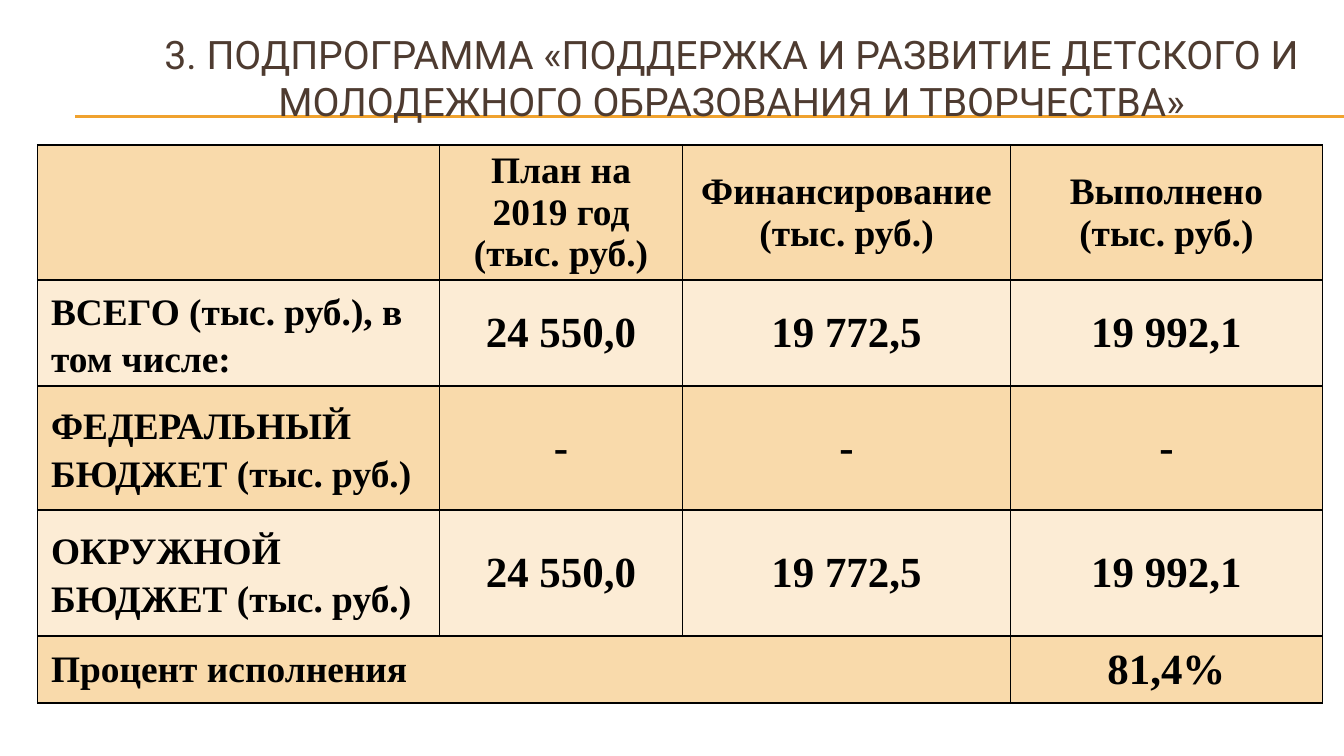
from pptx import Presentation
from pptx.dml.color import RGBColor
from pptx.enum.shapes import MSO_CONNECTOR
from pptx.enum.text import MSO_ANCHOR, MSO_AUTO_SIZE, PP_ALIGN
from pptx.oxml.ns import qn
from pptx.util import Inches, Pt
from lxml import etree

CENTER, LEFT = PP_ALIGN.CENTER, PP_ALIGN.LEFT
MIDDLE = MSO_ANCHOR.MIDDLE
NO_AUTOFIT = MSO_AUTO_SIZE.NONE
STRAIGHT = MSO_CONNECTOR.STRAIGHT
TITLE_ONLY = 5

COLORS = {
    "title": "4E3B30",
    "rule": "F0A22E",
    "text": "000000",
    "border": "000000",
    "dark band": "F9DAAB",
    "light band": "FCECD5",
}
TITLE_FONT, TABLE_FONT = "Roboto", "Times New Roman"
LABEL_SIZE, VALUE_SIZE = 20, 23

TITLE = ("3. ПОДПРОГРАММА «ПОДДЕРЖКА И РАЗВИТИЕ ДЕТСКОГО И "
         "МОЛОДЕЖНОГО ОБРАЗОВАНИЯ И ТВОРЧЕСТВА»")
COLUMN_WIDTHS = [2.99, 1.81, 2.44, 2.32]
ROW_HEIGHTS = [1.0, 0.78, 0.92, 0.94, 0.5]
AMOUNTS = ["24 550,0", "19 772,5", "19 992,1"]
ROWS = [
    ["", "План на 2019 год (тыс. руб.)", "Финансирование\n(тыс. руб.)",
     "Выполнено\n(тыс. руб.)"],
    ["ВСЕГО (тыс. руб.), в том числе:", *AMOUNTS],
    ["ФЕДЕРАЛЬНЫЙ БЮДЖЕТ (тыс. руб.)", "-", "-", "-"],
    ["ОКРУЖНОЙ БЮДЖЕТ (тыс. руб.)", *AMOUNTS],
    ["Процент исполнения", "", "", "81,4%"],
]


def color(name):
    return RGBColor.from_string(COLORS[name])


class SlideBuilder:
    """Holds the current slide and draws each kind of element in its style."""

    def __init__(self, slide):
        self.slide = slide

    def style_font(self, font, name, size, color_name, bold=False):
        font.name, font.size, font.bold = name, Pt(size), bold
        font.color.rgb = color(color_name)

    def title(self, text, left, top, width, height):
        shape = self.slide.shapes.title
        shape.left, shape.top = Inches(left), Inches(top)
        shape.width, shape.height = Inches(width), Inches(height)
        frame = shape.text_frame
        frame.text = text
        frame.word_wrap = True
        frame.auto_size = NO_AUTOFIT
        frame.vertical_anchor = MIDDLE
        paragraph = frame.paragraphs[0]
        paragraph.alignment = CENTER
        self.style_font(paragraph.font, TITLE_FONT, 21, "title")

    def rule(self, left, right, y):
        """Draw a horizontal line behind the title."""
        line = self.slide.shapes.add_connector(
            STRAIGHT, Inches(left), Inches(y), Inches(right), Inches(y))
        line.line.color.rgb = color("rule")
        line.line.width = Pt(0.75)
        etree.SubElement(line.element.spPr, qn("a:effectLst"))
        self.slide.shapes.title.element.addprevious(line.element)

    def border(self, cell):
        properties = cell._tc.get_or_add_tcPr()
        for side in ("lnL", "lnR", "lnT", "lnB"):
            line = etree.SubElement(properties, qn(f"a:{side}"), w=str(Pt(1)))
            fill = etree.SubElement(line, qn("a:solidFill"))
            etree.SubElement(fill, qn("a:srgbClr"), val=COLORS["border"])

    def cell(self, cell, text, band, size, alignment, spacing):
        self.border(cell)
        cell.fill.solid()
        cell.fill.fore_color.rgb = color(band)
        cell.vertical_anchor = MIDDLE
        cell.margin_left = cell.margin_right = Inches(0.1)
        cell.margin_top = cell.margin_bottom = Inches(0.04)
        cell.text = text
        for paragraph in cell.text_frame.paragraphs:
            paragraph.alignment = alignment
            paragraph.line_spacing = spacing
            self.style_font(paragraph.font, TABLE_FONT, size, "text", bold=True)

    def table(self, rows, left, top, widths, heights):
        table = self.slide.shapes.add_table(
            len(rows), len(widths), Inches(left), Inches(top),
            Inches(sum(widths)), Inches(sum(heights))).table
        for column, width in zip(table.columns, widths):
            column.width = Inches(width)
        for row, height in zip(table.rows, heights):
            row.height = Inches(height)
        last = len(rows) - 1
        for i, texts in enumerate(rows):
            band = "light band" if i % 2 else "dark band"
            for j, text in enumerate(texts):
                is_label = i == 0 or j == 0
                size = LABEL_SIZE if is_label else VALUE_SIZE
                alignment = LEFT if j == 0 else CENTER
                spacing = 1.15 if j == 0 and 0 < i < last else 1.0
                self.cell(table.cell(i, j), text, band, size, alignment, spacing)
        table.cell(last, 0).merge(table.cell(last, 2))


def main():
    presentation = Presentation()
    presentation.slide_width = Inches(10)
    presentation.slide_height = presentation.slide_width * 9 // 16
    layout = presentation.slide_layouts[TITLE_ONLY]
    builder = SlideBuilder(presentation.slides.add_slide(layout))
    builder.title(TITLE, 1.06, 0.23, 8.77, 0.69)
    for y in (0.86, 0.87):
        builder.rule(0.56, 10, y)
    builder.table(ROWS, 0.28, 1.08, COLUMN_WIDTHS, ROW_HEIGHTS)
    presentation.save("out.pptx")


if __name__ == "__main__":
    main()
